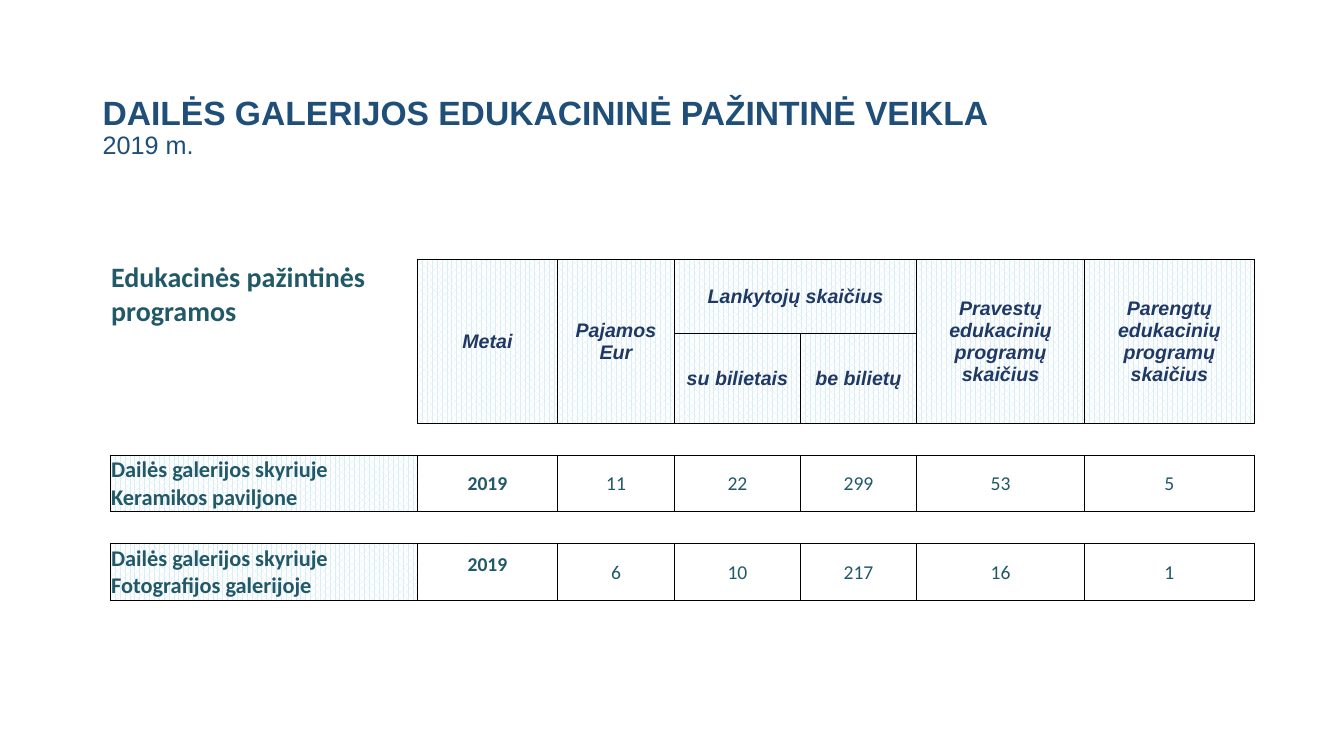
from dataclasses import dataclass

from lxml.etree import SubElement
from pptx import Presentation
from pptx.dml.color import RGBColor
from pptx.enum.dml import MSO_PATTERN
from pptx.enum.text import MSO_ANCHOR, MSO_AUTO_SIZE, PP_ALIGN
from pptx.oxml.ns import qn
from pptx.util import Cm, Pt


@dataclass(frozen=True)
class Theme:
    """Colours, fonts and type sizes of the slide."""
    title: str = "1F4E79"
    header: str = "203864"
    body: str = "215968"
    dots: str = "DBEEF4"
    paper: str = "FFFFFF"
    border: str = "000000"
    heading_font: str = "Arial"
    body_font: str = "Calibri"
    title_size: int = 24
    year_size: int = 18
    corner_size: int = 20
    label_size: int = 16
    cell_size: int = 14


THEME = Theme()
COLUMNS = [7.74, 3.53, 2.95, 3.17, 2.93, 4.23, 4.28]
ROWS = [1.87, 2.25, 0.81, 1.42, 0.81, 1.42]
GAP_ROWS = (2, 4)
CORNER = "Edukacinės pažintinės programos"
HEADERS = {
    (0, 1): "Metai",
    (0, 2): "Pajamos\nEur",
    (0, 3): "Lankytojų skaičius",
    (0, 5): "Pravestų edukacinių programų skaičius",
    (0, 6): "Parengtų edukacinių programų skaičius",
    (1, 3): "su bilietais",
    (1, 4): "be bilietų",
}
PROGRAMMES = {
    3: ["Dailės galerijos skyriuje\nKeramikos paviljone", "2019", "11", "22", "299", "53", "5"],
    5: ["Dailės galerijos skyriuje\nFotografijos galerijoje", "2019", "6", "10", "217", "16", "1"],
}


def style_run(r, font, size, color, bold=False, italic=False):
    """Format one run."""
    r.font.name = font
    r.font.size = Pt(size)
    r.font.color.rgb = RGBColor.from_string(color)
    r.font.bold = bold
    r.font.italic = italic


def add_title(s):
    """Place the two-line title."""
    sp = s.shapes.title
    sp.left, sp.top, sp.width, sp.height = Cm(2.33), Cm(1.27), Cm(28.45), Cm(2.9)
    tf = sp.text_frame
    tf.text = "DAILĖS GALERIJOS EDUKACININĖ PAŽINTINĖ VEIKLA\v2019 m."
    tf.auto_size = MSO_AUTO_SIZE.NONE
    tf.vertical_anchor = MSO_ANCHOR.BOTTOM
    p = tf.paragraphs[0]
    p.alignment = PP_ALIGN.LEFT
    p.line_spacing = 0.9
    heading, year = p.runs
    style_run(heading, THEME.heading_font, THEME.title_size, THEME.title, bold=True)
    style_run(year, THEME.heading_font, THEME.year_size, THEME.title)


def visible_sides(row, col):
    """Return the sides of a cell that carry a line."""
    if row in GAP_ROWS:
        return "B" if (row, col) == (2, 0) else "TB"
    if row < 2 and col == 0:
        return "R"
    return "LRTB"


def set_borders(cell, sides):
    """Draw thin lines on the given sides and clear the others."""
    tc_pr = cell._tc.get_or_add_tcPr()
    for side in "LRTB":
        ln = SubElement(tc_pr, qn(f"a:ln{side}"), w=str(Pt(0.5)))
        if side in sides:
            fill = SubElement(ln, qn("a:solidFill"))
            SubElement(fill, qn("a:srgbClr"), val=THEME.border)
        else:
            SubElement(ln, qn("a:noFill"))


def set_dots(cell):
    """Fill a cell with the dotted pattern."""
    cell.fill.patterned()
    cell.fill.pattern = MSO_PATTERN.PERCENT_70
    cell.fill.fore_color.rgb = RGBColor.from_string(THEME.dots)
    cell.fill.back_color.rgb = RGBColor.from_string(THEME.paper)


def write_cell(cell, text, align=PP_ALIGN.CENTER, anchor=MSO_ANCHOR.MIDDLE, **style):
    """Write and format the text of a cell."""
    cell.text_frame.text = text
    cell.vertical_anchor = anchor
    for p in cell.text_frame.paragraphs:
        p.alignment = align
        for r in p.runs:
            style_run(r, **style)


def add_grid(s):
    """Add the table with its sizes, lines and merged cells."""
    frame = s.shapes.add_table(len(ROWS), len(COLUMNS), Cm(2.78), Cm(6.54),
                               Cm(sum(COLUMNS)), Cm(sum(ROWS)))
    table = frame.table
    table.first_row = table.horz_banding = False
    for column, width in zip(table.columns, COLUMNS):
        column.width = Cm(width)
    for row, height in zip(table.rows, ROWS):
        row.height = Cm(height)
    for row in range(len(ROWS)):
        for col in range(len(COLUMNS)):
            cell = table.cell(row, col)
            cell.margin_left = cell.margin_right = cell.margin_top = Cm(0.02)
            cell.margin_bottom = 0
            set_borders(cell, visible_sides(row, col))
            cell.fill.background()
    for col in (0, 1, 2, 5, 6):
        table.cell(0, col).merge(table.cell(1, col))
    table.cell(0, 3).merge(table.cell(0, 4))
    return table


def fill_headers(table):
    """Write the corner and the column headers."""
    write_cell(table.cell(0, 0), CORNER, PP_ALIGN.LEFT, MSO_ANCHOR.TOP,
               font=THEME.body_font, size=THEME.corner_size, color=THEME.body, bold=True)
    for (row, col), text in HEADERS.items():
        cell = table.cell(row, col)
        set_dots(cell)
        write_cell(cell, text, font=THEME.heading_font, size=THEME.cell_size,
                   color=THEME.header, bold=True, italic=True)


def fill_programmes(table):
    """Write the programme rows."""
    for row, (label, *values) in PROGRAMMES.items():
        set_dots(table.cell(row, 0))
        write_cell(table.cell(row, 0), label, PP_ALIGN.LEFT, font=THEME.body_font,
                   size=THEME.label_size, color=THEME.body, bold=True)
        for col, value in enumerate(values, 1):
            write_cell(table.cell(row, col), value, font=THEME.body_font,
                       size=THEME.cell_size, color=THEME.body, bold=col == 1)
    last_year = table.cell(5, 1)
    last_year.vertical_anchor = MSO_ANCHOR.BOTTOM
    last_year.margin_bottom = Cm(0.58)


def main():
    """Build and save the slide."""
    prs = Presentation()
    prs.slide_width, prs.slide_height = Cm(33.87), Cm(19.05)
    s = prs.slides.add_slide(prs.slide_layouts[5])
    add_title(s)
    table = add_grid(s)
    fill_headers(table)
    fill_programmes(table)
    prs.save("out.pptx")


if __name__ == "__main__":
    main()
